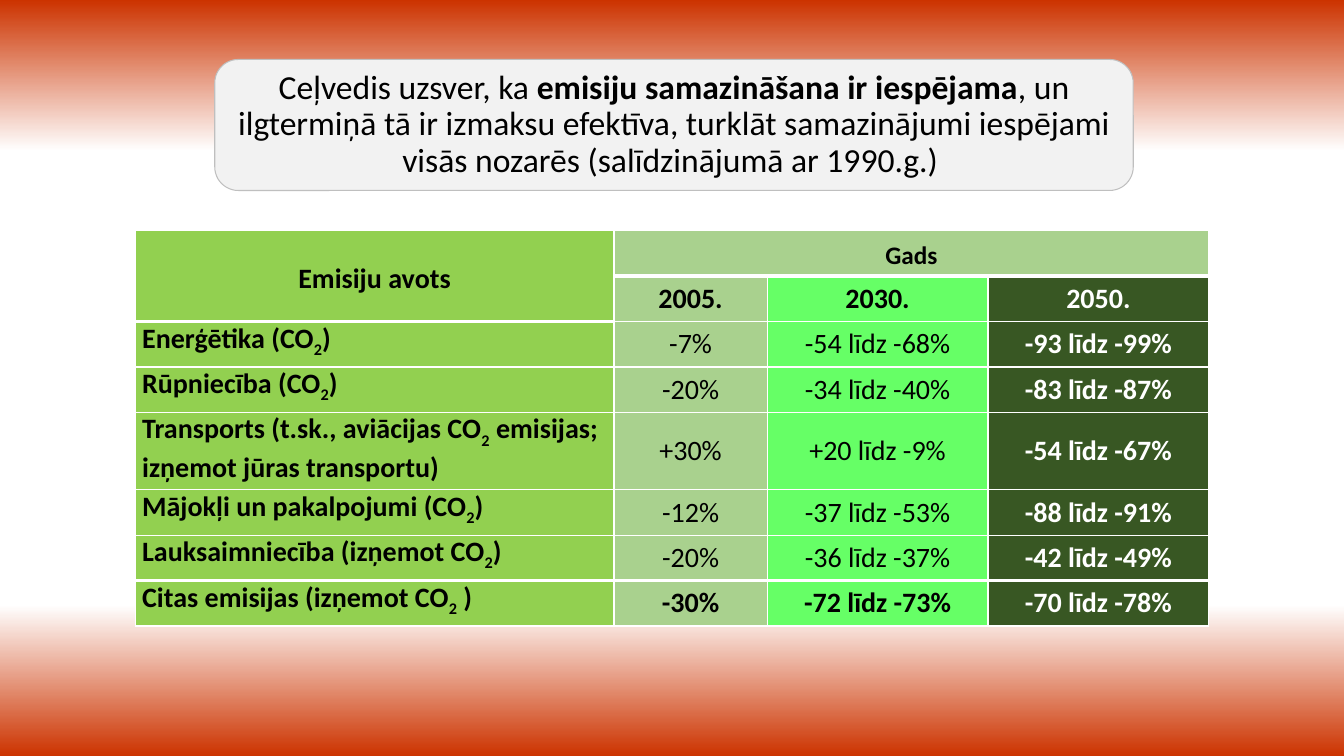
import pptx
import pptx.util
import pptx.dml.color
import pptx.enum.shapes
import pptx.enum.text
import pptx.oxml

Inches, Pt = pptx.util.Inches, pptx.util.Pt
ALIGN = pptx.enum.text.PP_ALIGN
ANCHOR = pptx.enum.text.MSO_ANCHOR

HEX = {
    "red": "CC3300", "white": "FFFFFF", "black": "000000",
    "panel": "F2F2F2", "edge": "BFBFBF", "lime": "92D050",
    "sage": "A9D18E", "neon": "66FF66", "forest": "385723",
}
FONT = "Calibri"
BACK = [(0, "red"), (20, "white"), (80, "white"), (100, "red")]

TITLE = [
    ("Ceļvedis uzsver, ka ", False),
    ("emisiju samazināšana ir iespējama", True),
    (", un ilgtermiņā tā ir izmaksu efektīva, turklāt samazinājumi "
     "iespējami visās nozarēs (salīdzinājumā ar 1990.g.) ", False),
]
ROWS = [
    ("Emisiju avots", "Gads", "", ""),
    ("", "2005.", "2030.", "2050."),
    ("Enerģētika (CO2)", "-7%", "-54 līdz -68%", "-93 līdz -99%"),
    ("Rūpniecība (CO2)", "-20%", "-34 līdz -40%", "-83 līdz -87%"),
    ("Transports (t.sk., aviācijas CO2 emisijas; izņemot jūras transportu)",
     "+30%", "+20 līdz -9%", "-54 līdz -67%"),
    ("Mājokļi un pakalpojumi (CO2)", "-12%", "-37 līdz -53%", "-88 līdz -91%"),
    ("Lauksaimniecība (izņemot CO2)", "-20%", "-36 līdz -37%", "-42 līdz -49%"),
    ("Citas emisijas (izņemot CO2 )", "-30%", "-72 līdz -73%", "-70 līdz -78%"),
]
HEAD, LAST, TALL = 2, len(ROWS) - 1, 4
WIDTHS = [4.75, 1.52, 2.19, 2.19]
FILLS = ["lime", "sage", "neon", "forest"]


def color(name):
    return pptx.dml.color.RGBColor.from_string(HEX[name])


def add_run(para, text, size, bold, ink="black"):
    run = para.add_run()
    run.text = text
    run.font.name, run.font.size, run.font.bold = FONT, Pt(size), bold
    run.font.color.rgb = color(ink)
    return run


def paint_back(slide):
    """Fill the background with a vertical gradient of several stops."""
    fill = slide.background.fill
    fill.gradient()
    grad = slide._element.find(".//" + pptx.oxml.ns.qn("a:gradFill"))
    stops = "".join(
        f'<a:gs pos="{at * 1000}"><a:srgbClr val="{HEX[name]}"/></a:gs>'
        for at, name in BACK)
    new = pptx.oxml.parse_xml(
        f'<a:gradFill {pptx.oxml.ns.nsdecls("a")} rotWithShape="1">'
        f'<a:gsLst>{stops}</a:gsLst><a:lin ang="5400000" scaled="0"/></a:gradFill>')
    grad.getparent().replace(grad, new)


def add_title(slide):
    box = slide.shapes.add_shape(
        pptx.enum.shapes.MSO_SHAPE.ROUNDED_RECTANGLE,
        Inches(2.13), Inches(0.59), Inches(9.11), Inches(1.3))
    box.adjustments[0] = 0.18
    box.shadow.inherit = False
    box.fill.solid()
    box.fill.fore_color.rgb = color("panel")
    box.line.color.rgb = color("edge")
    box.line.width = Pt(0.75)
    frame = box.text_frame
    frame.word_wrap = True
    frame.vertical_anchor = ANCHOR.MIDDLE
    para = frame.paragraphs[0]
    para.alignment, para.line_spacing = ALIGN.CENTER, 0.9
    for text, bold in TITLE:
        add_run(para, text, 24, bold)


def is_thick(row, col):
    """Tell whether the rule above this cell is a heavy one."""
    return row in (1, LAST) or (row == HEAD and col == 0)


def set_rules(cell, row, col):
    props = cell._tc.get_or_add_tcPr()
    heavy = {"T": is_thick(row, col), "B": is_thick(row + 1, col)}
    for spot, side in enumerate("LRTB"):
        width = Pt(3 if heavy.get(side) else 1)
        props.insert(spot, pptx.oxml.parse_xml(
            f'<a:ln{side} {pptx.oxml.ns.nsdecls("a")} w="{width}"><a:solidFill>'
            f'<a:srgbClr val="{HEX["white"]}"/></a:solidFill></a:ln{side}>'))


def fill_cell(cell, row, col):
    label = col == 0 and row >= HEAD
    cell.margin_left = cell.margin_right = Inches(0.07)
    cell.margin_top = cell.margin_bottom = 0
    top = label or row == 1
    cell.vertical_anchor = ANCHOR.TOP if top else ANCHOR.MIDDLE
    cell.fill.solid()
    cell.fill.fore_color.rgb = color("sage" if row == 0 and col else FILLS[col])
    set_rules(cell, row, col)

    para = cell.text_frame.paragraphs[0]
    para.alignment = ALIGN.LEFT if label else ALIGN.CENTER
    para.line_spacing = 1.15 if row < HEAD else 1.0
    text = ROWS[row][col]
    if label:
        start, low, rest = text.partition("2")
        add_run(para, start, 20, True)
        sub = add_run(para, low, 20, True)
        sub.font._element.set("baseline", "-25000")
        add_run(para, rest, 20, True)
    elif text:
        bold = row < HEAD or row == LAST or col == 3
        ink = "white" if col == 3 else "black"
        add_run(para, text, 18 if text == "Gads" else 20, bold, ink)


def add_grid(slide):
    tall = [0.77 if row == TALL else 0.45 for row in range(len(ROWS))]
    table = slide.shapes.add_table(
        len(ROWS), len(WIDTHS), Inches(1.34), Inches(2.29),
        Inches(sum(WIDTHS)), Inches(sum(tall))).table
    for col, width in enumerate(WIDTHS):
        table.columns[col].width = Inches(width)
    for row, height in enumerate(tall):
        table.rows[row].height = Inches(height)
        for col in range(len(WIDTHS)):
            fill_cell(table.cell(row, col), row, col)
    table.cell(0, 0).merge(table.cell(1, 0))
    table.cell(0, 1).merge(table.cell(0, 3))


def main():
    deck = pptx.Presentation()
    deck.slide_width, deck.slide_height = Inches(13.33), Inches(7.5)
    slide = deck.slides.add_slide(deck.slide_layouts[6])
    paint_back(slide)
    add_title(slide)
    add_grid(slide)
    deck.save("out.pptx")


if __name__ == "__main__":
    main()
